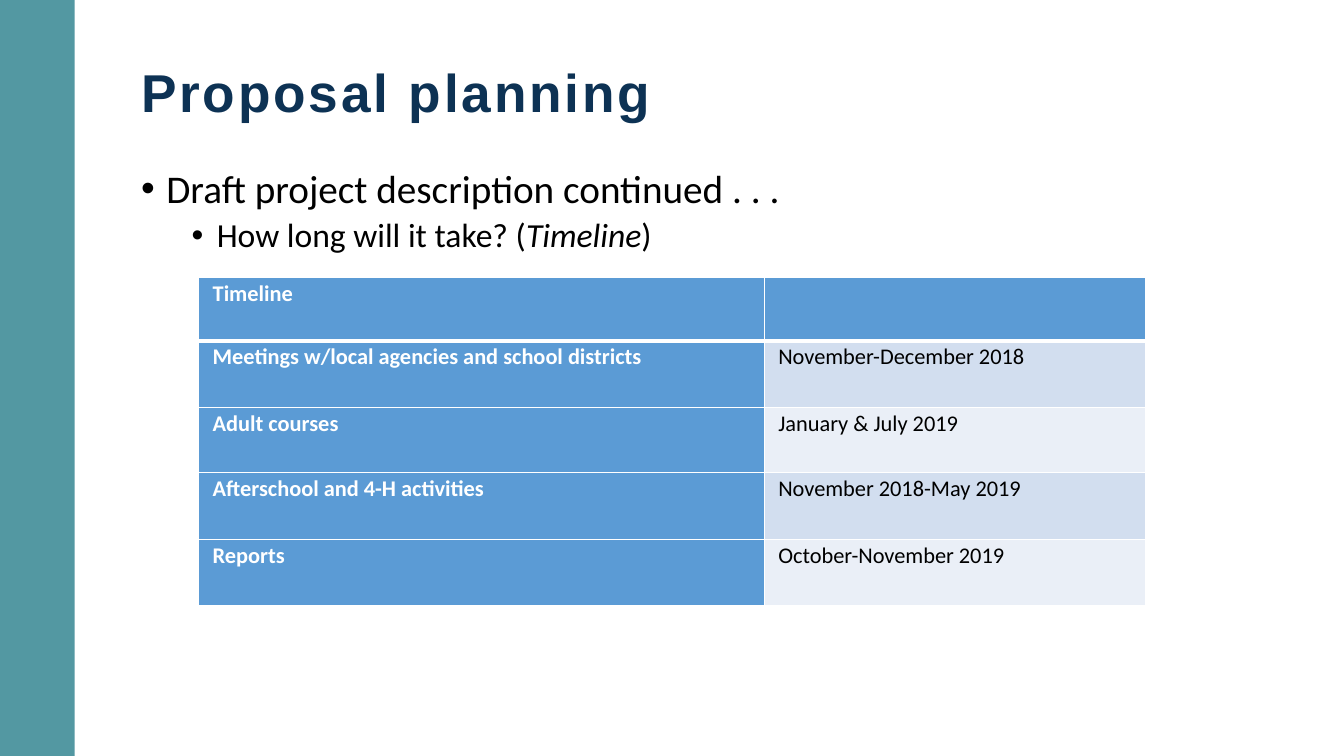
from pptx import Presentation
from pptx.dml.color import RGBColor
from pptx.enum.shapes import MSO_SHAPE
from pptx.enum.text import MSO_ANCHOR, MSO_AUTO_SIZE, PP_ALIGN
from pptx.oxml import parse_xml
from pptx.oxml.ns import nsdecls
from pptx.util import Inches, Pt

TEAL = RGBColor(0x53, 0x98, 0xA2)
NAVY = RGBColor(0x0D, 0x32, 0x54)
BLUE = RGBColor(0x5B, 0x9B, 0xD5)
BAND_DARK = RGBColor(0xD2, 0xDE, 0xEF)
BAND_LIGHT = RGBColor(0xEA, 0xEF, 0xF7)
WHITE = RGBColor(0xFF, 0xFF, 0xFF)
BLACK = RGBColor(0, 0, 0)


def add_run(paragraph, text, font_name, size, color, bold=False, italic=False):
    run = paragraph.add_run()
    run.text = text
    run.font.name = font_name
    run.font.size = Pt(size)
    run.font.color.rgb = color
    run.font.bold = bold
    run.font.italic = italic
    return run


def place(shape, left, top, width, height):
    shape.left, shape.top = Inches(left), Inches(top)
    shape.width, shape.height = Inches(width), Inches(height)


presentation = Presentation()
presentation.slide_width = Inches(13.33)
presentation.slide_height = Inches(7.5)
slide = presentation.slides.add_slide(presentation.slide_layouts[1])
title, body = slide.placeholders

# Side band, behind everything else
band = slide.shapes.add_shape(MSO_SHAPE.RECTANGLE, 0, 0, Inches(0.74), Inches(7.5))
band.shadow.inherit = False
band.fill.solid()
band.fill.fore_color.rgb = TEAL
band.line.fill.background()
slide.shapes._spTree.insert(2, band._element)

# Title
place(title, 1.3, 0.51, 11.05, 0.74)
title_frame = title.text_frame
title_frame.auto_size = MSO_AUTO_SIZE.NONE
title_frame.vertical_anchor = MSO_ANCHOR.BOTTOM
title_frame.margin_bottom = Inches(0.03)
title_paragraph = title_frame.paragraphs[0]
title_paragraph.alignment = PP_ALIGN.LEFT
title_run = add_run(title_paragraph, "Proposal planning", "Arial", 38, NAVY, bold=True)
title_run.font._element.set("spc", "200")

# Bulleted list: level, indent, space before, size, (text, italic) runs
bullets = [
    (0, 0.25, 0, 28, [("Draft project description continued . . .", False)]),
    (1, 0.75, 5, 24, [("How long will it take? (", False), ("Timeline", True), (")", False)]),
]
place(body, 1.3, 1.63, 11.05, 4.49)
body_frame = body.text_frame
body_frame.auto_size = MSO_AUTO_SIZE.NONE
body_frame.vertical_anchor = MSO_ANCHOR.TOP
for index, (level, indent, space_before, size, runs) in enumerate(bullets):
    paragraph = body_frame.add_paragraph() if index else body_frame.paragraphs[0]
    paragraph.level = level
    paragraph.line_spacing = 0.9
    paragraph.space_before = Pt(space_before)
    properties = paragraph._p.get_or_add_pPr()
    properties.set("marL", str(Inches(indent)))
    properties.set("indent", str(-Inches(0.25)))
    properties.append(parse_xml(f'<a:buFont {nsdecls("a")} typeface="Arial"/>'))
    properties.append(parse_xml(f'<a:buChar {nsdecls("a")} char="•"/>'))
    for text, italic in runs:
        add_run(paragraph, text, "Calibri", size, BLACK, italic=italic)

# Timeline table
timeline = [
    ("Timeline", ""),
    ("Meetings w/local agencies and school districts", "November-December 2018"),
    ("Adult courses", "January & July 2019"),
    ("Afterschool and 4-H activities", "November 2018-May 2019"),
    ("Reports", "October-November 2019"),
]
table = slide.shapes.add_table(
    len(timeline), 2, Inches(1.97), Inches(2.75), Inches(9.39), Inches(3.25)
).table
for column, width in zip(table.columns, (5.61, 3.78)):
    column.width = Inches(width)
for row, height in zip(table.rows, (0.63, 0.66, 0.65, 0.66, 0.66)):
    row.height = Inches(height)

for row_index, texts in enumerate(timeline):
    for column_index, text in enumerate(texts):
        cell = table.cell(row_index, column_index)
        is_heading = row_index == 0 or column_index == 0
        cell.margin_left = cell.margin_right = Inches(0.14)
        cell.margin_top, cell.margin_bottom = Inches(0.01), 0
        cell.vertical_anchor = MSO_ANCHOR.TOP

        for side in ("lnL", "lnR", "lnT", "lnB"):
            under_header = (row_index, side) in ((0, "lnB"), (1, "lnT"))
            width = Pt(3 if under_header else 1)
            cell._tc.get_or_add_tcPr().append(parse_xml(
                f'<a:{side} {nsdecls("a")} w="{width}"><a:solidFill>'
                f'<a:srgbClr val="{WHITE}"/></a:solidFill></a:{side}>'
            ))
        cell.fill.solid()
        band_color = BAND_DARK if row_index % 2 else BAND_LIGHT
        cell.fill.fore_color.rgb = BLUE if is_heading else band_color

        if text:
            paragraph = cell.text_frame.paragraphs[0]
            paragraph.line_spacing = 1.07
            paragraph.space_after = Pt(8)
            color = WHITE if is_heading else BLACK
            add_run(paragraph, text, "Calibri", 16, color, bold=is_heading)

presentation.save("out.pptx")
